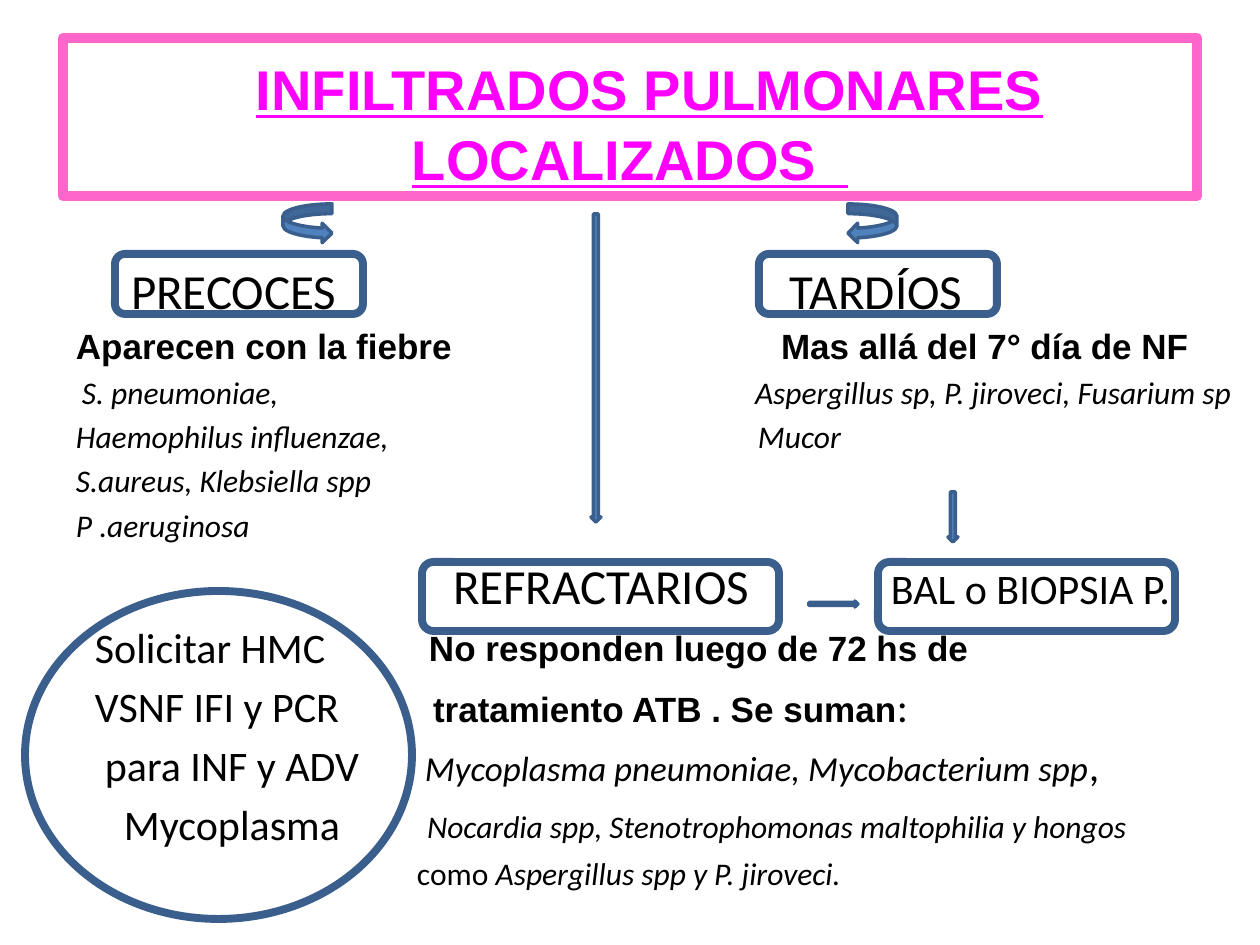
"""Build the slide on localized pulmonary infiltrates."""
from pptx import Presentation
from pptx.dml.color import RGBColor
from pptx.enum.shapes import MSO_SHAPE
from pptx.enum.text import MSO_ANCHOR, PP_ALIGN
from pptx.util import Emu, Pt

EMU_PER_PX = 914400 / 126
PT_PER_PX = 72 / 126
DESCENT = {"Calibri": 0.26, "Arial": 0.21}
BLUE, NAVY, PINK, MAGENTA, BLACK = "4F81BD", "3A5F8C", "FF66CC", "FF00FF", "000000"

TITLE = "INFILTRADOS PULMONARES LOCALIZADOS  "
TITLE_BOX = (63, 38, 1134, 158)

HEADING = ("Calibri", 28, "")
LABEL = ("Calibri", 24, "")
BOLD = ("Arial", 20, "b")
SPECIES = ("Calibri", 18, "i")
LARGE_SPECIES = ("Calibri", 20, "i")
PLAIN = ("Calibri", 18, "")

# left, first baseline, width, then paragraphs of (indent, line pitch, runs)
TEXT_BLOCKS = [
    (131, 307, 230, [(0, 60, [("PRECOCES", HEADING)])]),
    (790, 307, 210, [(0, 60, [("TARDÍOS", HEADING)])]),
    (76, 359, 440, [
        (0, 44, [("Aparecen con la fiebre", BOLD)]),
        (6, 45, [("S. pneumoniae,", SPECIES)]),
        (0, 44, [("Haemophilus influenzae,", SPECIES)]),
        (0, 44, [("S.aureus, Klebsiella spp", SPECIES)]),
        (0, 45, [("P .aeruginosa", SPECIES)]),
    ]),
    (755, 359, 500, [
        (26, 44, [("Mas allá del 7° día de NF", BOLD)]),
        (0, 45, [("Aspergillus sp, P. jiroveci, Fusarium sp", SPECIES)]),
        (3, 44, [("Mucor", SPECIES)]),
    ]),
    (453, 602, 320, [(0, 60, [("REFRACTARIOS", HEADING)])]),
    (891, 602, 310, [(0, 52, [("BAL o BIOPSIA P.", LABEL)])]),
    (95, 661, 300, [
        (0, 59, [("Solicitar HMC", LABEL)]),
        (0, 59, [("VSNF IFI y PCR", LABEL)]),
        (10, 59, [("para INF y ADV", LABEL)]),
        (29, 59, [("Mycoplasma", LABEL)]),
    ]),
    (417, 661, 800, [
        (12, 59, [("No responden luego de 72 hs de", BOLD)]),
        (16, 63, [("tratamiento ATB . Se suman", BOLD), (":", LABEL)]),
        (8, 59, [("Mycoplasma pneumoniae, Mycobacterium spp", LARGE_SPECIES), (",", LABEL)]),
        (10, 55, [("Nocardia spp, Stenotrophomonas maltophilia y hongos", SPECIES)]),
        (0, 46, [("como ", PLAIN), ("Aspergillus spp y P. jiroveci.", SPECIES)]),
    ]),
]

FRAMES = [
    (MSO_SHAPE.ROUNDED_RECTANGLE, (115, 254, 248, 60)),
    (MSO_SHAPE.ROUNDED_RECTANGLE, (422, 562, 357, 69)),
    (MSO_SHAPE.ROUNDED_RECTANGLE, (759, 254, 238, 60)),
    (MSO_SHAPE.ROUNDED_RECTANGLE, (878, 562, 297, 69)),
    (MSO_SHAPE.OVAL, (25, 591, 387, 328)),
]
ARROWS = [
    (MSO_SHAPE.DOWN_ARROW, (591, 214, 10, 308)),
    (MSO_SHAPE.CURVED_LEFT_ARROW, (848, 204, 49, 39)),
    (MSO_SHAPE.CURVED_RIGHT_ARROW, (283, 204, 49, 39)),
    (MSO_SHAPE.DOWN_ARROW, (948, 492, 10, 50)),
    (MSO_SHAPE.RIGHT_ARROW, (809, 601, 49, 6)),
]


def px(value):
    """Turn pixels into EMU."""
    return Emu(round(value * EMU_PER_PX))


def color(value):
    """Turn a hex string into a colour."""
    return RGBColor.from_string(value)


def add_shape(slide, kind, box, line, width, fill=None):
    """Add an outlined preset shape."""
    shape = slide.shapes.add_shape(kind, *map(px, box))
    shape.shadow.inherit = False
    shape.line.color.rgb = color(line)
    shape.line.width = Pt(width)
    if fill:
        shape.fill.solid()
        shape.fill.fore_color.rgb = color(fill)
    else:
        shape.fill.background()
    return shape


def add_title(slide):
    """Add the framed, underlined title."""
    shape = add_shape(slide, MSO_SHAPE.RECTANGLE, TITLE_BOX, PINK, 6)
    frame = shape.text_frame
    frame.text = TITLE
    frame.word_wrap = True
    frame.vertical_anchor = MSO_ANCHOR.MIDDLE
    frame.margin_top, frame.margin_bottom = px(16), px(6)
    paragraph = frame.paragraphs[0]
    paragraph.alignment = PP_ALIGN.CENTER
    paragraph.line_spacing = Pt(40)
    paragraph._p.get_or_add_pPr().set("indent", str(px(39)))
    font = paragraph.runs[0].font
    font.name, font.size = "Arial", Pt(32)
    font.bold = font.underline = True
    font.color.rgb = color(MAGENTA)


def add_text_block(slide, left, baseline, width, lines):
    """Add a text box whose first line rests on the given baseline."""
    _, first_pitch, first_runs = lines[0]
    descent = max(DESCENT[name] * size / PT_PER_PX for _, (name, size, _) in first_runs)
    height = sum(pitch for _, pitch, _ in lines)
    top = baseline - first_pitch + descent
    frame = slide.shapes.add_textbox(*map(px, (left, top, width, height))).text_frame
    frame.word_wrap = True
    frame.margin_left = frame.margin_right = frame.margin_top = frame.margin_bottom = 0
    for index, (indent, pitch, runs) in enumerate(lines):
        paragraph = frame.add_paragraph() if index else frame.paragraphs[0]
        paragraph.line_spacing = Pt(round(pitch * PT_PER_PX, 1))
        paragraph._p.get_or_add_pPr().set("marL", str(px(indent)))
        for text, (name, size, style) in runs:
            run = paragraph.add_run()
            run.text = text
            run.font.name, run.font.size = name, Pt(size)
            run.font.bold, run.font.italic = style == "b", style == "i"
            run.font.color.rgb = color(BLACK)


def main():
    """Build and save the presentation."""
    presentation = Presentation()
    presentation.slide_width, presentation.slide_height = px(1260), px(945)
    slide = presentation.slides.add_slide(presentation.slide_layouts[6])
    add_title(slide)
    for block in TEXT_BLOCKS:
        add_text_block(slide, *block)
    for kind, box in FRAMES:
        add_shape(slide, kind, box, NAVY, 4.5)
    for kind, box in ARROWS:
        add_shape(slide, kind, box, NAVY, 2, BLUE)
    presentation.save("out.pptx")


if __name__ == "__main__":
    main()
